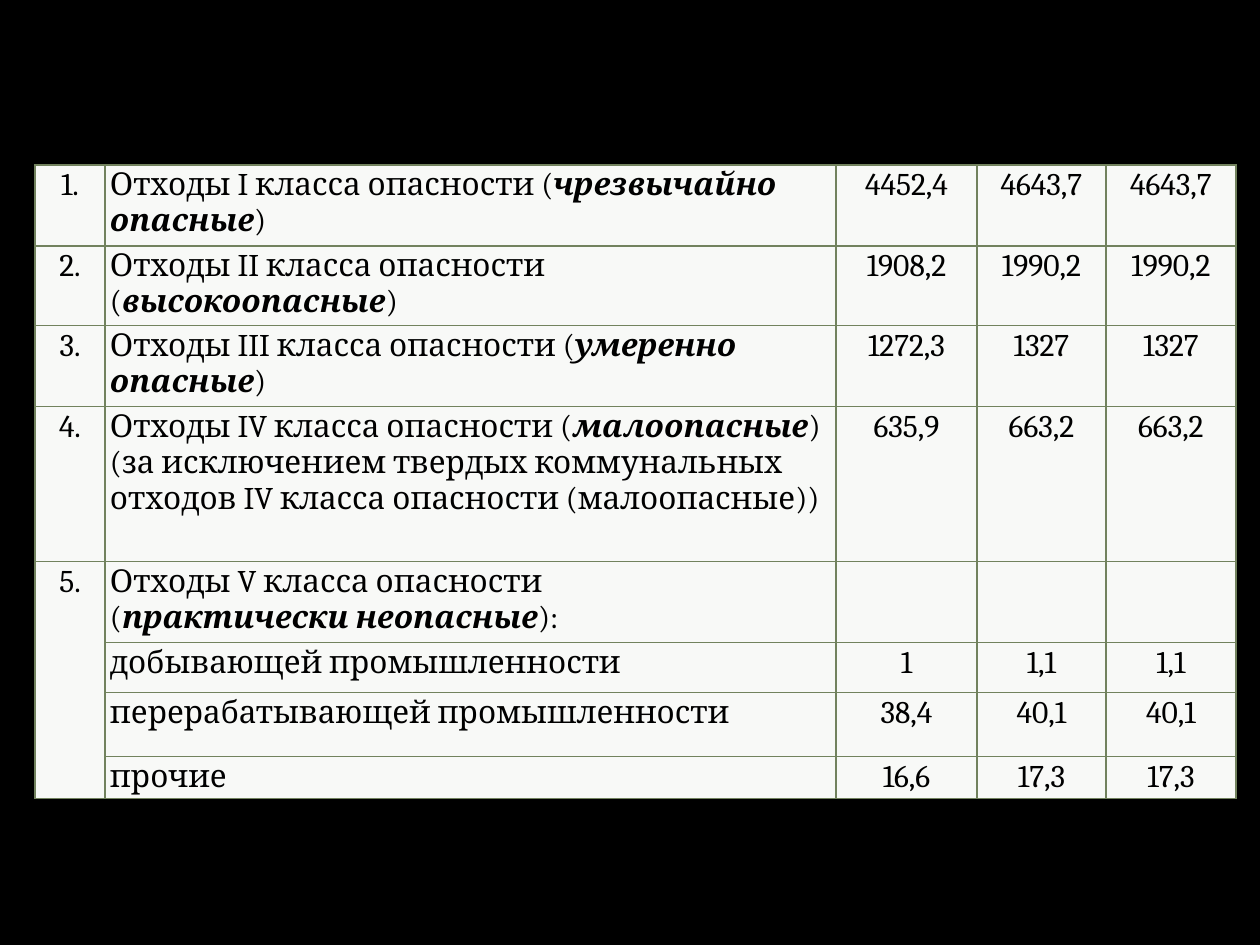
from pptx import Presentation
from pptx import util as u
from pptx.dml.color import RGBColor
from pptx.enum import text
from pptx.oxml import parse_xml
from pptx.oxml.ns import nsdecls

BLACK = RGBColor(0x00, 0x00, 0x00)
CELL = RGBColor(0xF8, 0xF9, 0xF7)
BORDER = RGBColor(0x72, 0x82, 0x5E)
PX_PER_INCH = 126

COLS = [70, 731, 141, 129, 130]
ROW_HEIGHTS = [81, 80, 81, 155, 81, 50, 64, 42]
# Asterisks enclose the bold italic words
ROWS = [
    ["1.", "Отходы I класса опасности (*чрезвычайно опасные*)", "4452,4", "4643,7", "4643,7"],
    ["2.", "Отходы II класса опасности (*высокоопасные*)", "1908,2", "1990,2", "1990,2"],
    ["3.", "Отходы III класса опасности (*умеренно опасные*)", "1272,3", "1327", "1327"],
    ["4.", "Отходы IV класса опасности (*малоопасные*)\n"
           "(за исключением твердых коммунальных отходов IV класса опасности (малоопасные))",
     "635,9", "663,2", "663,2"],
    ["5.", "Отходы V класса опасности\n(*практически неопасные*):", "", "", ""],
    ["", "добывающей промышленности", "1", "1,1", "1,1"],
    ["", "перерабатывающей промышленности", "38,4", "40,1", "40,1"],
    ["", "прочие", "16,6", "17,3", "17,3"],
]


def px(n):
    return u.Emu(round(n * 914400 / PX_PER_INCH))


class Deck:
    font = {"name": "Cambria", "size": u.Pt(18)}
    insets = {"margin_left": 5, "margin_right": 5, "margin_top": 2, "margin_bottom": 2}

    def __init__(self, width, height):
        self.prs = Presentation()
        self.prs.slide_width, self.prs.slide_height = px(width), px(height)

    def slide(self, color):
        self.s = self.prs.slides.add_slide(self.prs.slide_layouts[6])
        fill = self.s.background.fill
        fill.solid()
        fill.fore_color.rgb = color

    def format_font(self, font, **extra):
        for key, value in {**self.font, **extra}.items():
            setattr(font, key, value)
        font.color.rgb = BLACK

    def add_text(self, tf, content, align):
        for i, line in enumerate(content.split("\n")):
            p = tf.paragraphs[0] if i == 0 else tf.add_paragraph()
            p.alignment = align
            for j, part in enumerate(line.split("*")):
                if part:
                    r = p.add_run()
                    r.text = part
                    strong = j % 2 == 1
                    self.format_font(r.font, bold=strong, italic=strong)
            if not line:
                self.format_font(p.font)

    def borders(self, cell):
        tc_pr = cell._tc.get_or_add_tcPr()
        for i, side in enumerate(("lnL", "lnR", "lnT", "lnB")):
            tc_pr.insert(i, parse_xml(
                f'<a:{side} {nsdecls("a")} w="{u.Pt(0.75)}"><a:solidFill>'
                f'<a:srgbClr val="{BORDER}"/></a:solidFill></a:{side}>'))

    def table(self, x, y, cols, heights, rows):
        shape = self.s.shapes.add_table(len(rows), len(cols), px(x), px(y),
                                        px(sum(cols)), px(sum(heights)))
        tbl = shape.table
        tbl.first_row = tbl.horz_banding = False
        for col, width in zip(tbl.columns, cols):
            col.width = px(width)
        for row, height, values in zip(tbl.rows, heights, rows):
            row.height = px(height)
            for c, (cell, value) in enumerate(zip(row.cells, values)):
                for key, inset in self.insets.items():
                    setattr(cell, key, px(inset))
                cell.fill.solid()
                cell.fill.fore_color.rgb = CELL
                self.borders(cell)
                align = text.PP_ALIGN.LEFT if c == 1 else text.PP_ALIGN.CENTER
                self.add_text(cell.text_frame, value, align)
        return tbl


def main():
    deck = Deck(1260, 945)
    deck.slide(BLACK)

    # Waste classes; class V spans its sub-rows
    tbl = deck.table(35, 165, COLS, ROW_HEIGHTS, ROWS)
    tbl.cell(4, 0).merge(tbl.cell(7, 0))

    deck.prs.save("out.pptx")


if __name__ == "__main__":
    main()
